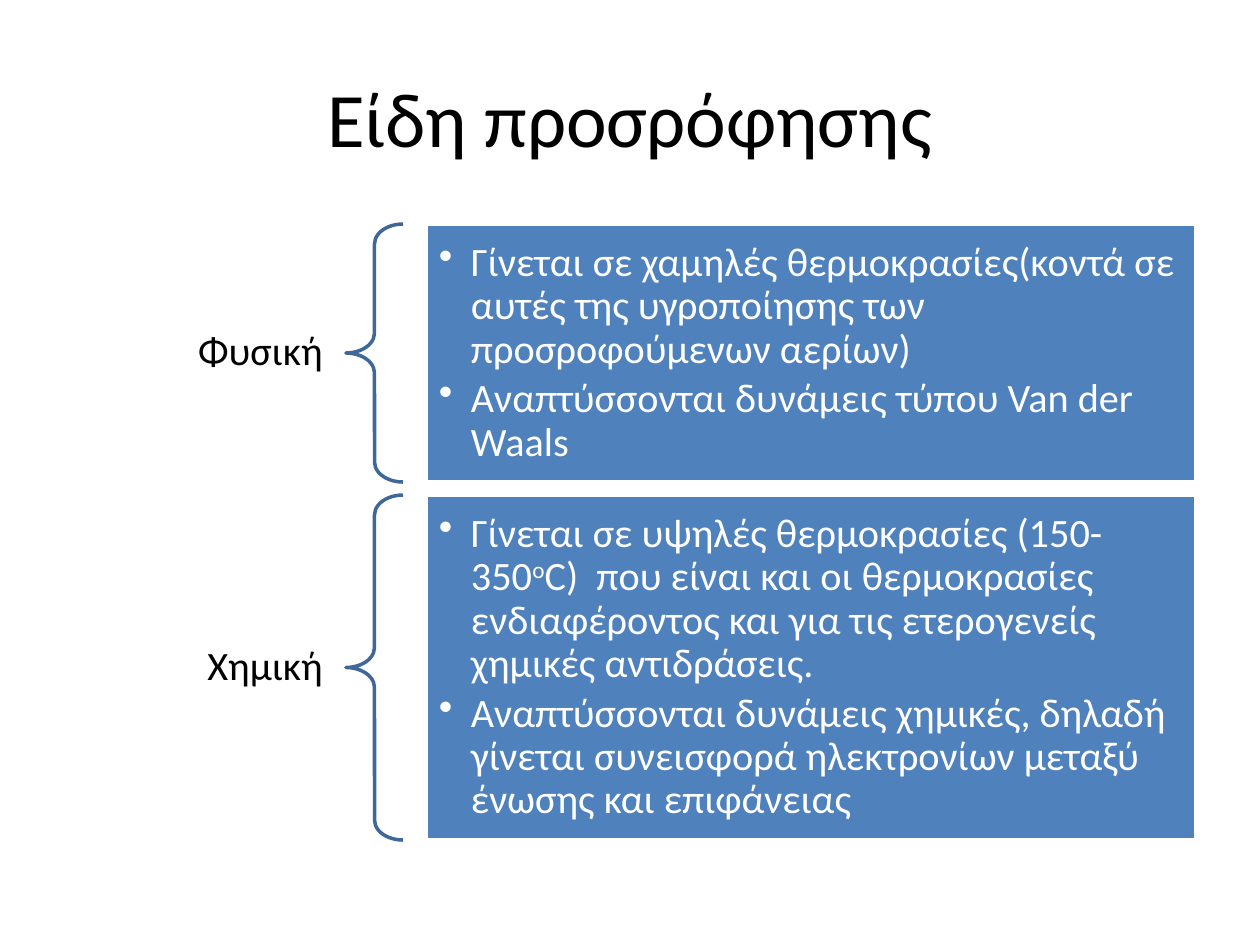
from dataclasses import dataclass

from lxml import etree
from pptx import Presentation
from pptx.dml.color import RGBColor
from pptx.enum.shapes import MSO_SHAPE
from pptx.enum.text import MSO_ANCHOR, PP_ALIGN
from pptx.oxml.ns import qn
from pptx.util import Pt

PX = 914400 / 126
LEFT, CENTER, RIGHT = PP_ALIGN.LEFT, PP_ALIGN.CENTER, PP_ALIGN.RIGHT
MIDDLE = MSO_ANCHOR.MIDDLE
BRACE, RECT = MSO_SHAPE.LEFT_BRACE, MSO_SHAPE.RECTANGLE


@dataclass(frozen=True)
class Theme:
    """Colours, font and type sizes of the slide."""
    font: str = "Calibri"
    ink: str = "000000"
    white: str = "FFFFFF"
    panel: str = "4F81BD"
    brace: str = "3F6797"
    title: int = 44
    body: int = 23
    line: int = 2


THEME = Theme()

KINDS = [
    ("Φυσική", 258, [
        "Γίνεται σε χαμηλές θερμοκρασίες(κοντά σε αυτές της υγροποίησης των "
        "προσροφούμενων αερίων)",
        "Αναπτύσσονται δυνάμεις τύπου Van der Waals",
    ]),
    ("Χημική", 345, [
        "Γίνεται σε υψηλές θερμοκρασίες (150-350^ο^C)  που είναι και οι "
        "θερμοκρασίες ενδιαφέροντος και για τις ετερογενείς χημικές αντιδράσεις.",
        "Αναπτύσσονται δυνάμεις χημικές, δηλαδή γίνεται συνεισφορά ηλεκτρονίων "
        "μεταξύ ένωσης και επιφάνειας",
    ]),
]


def emu(px):
    """Turn px into EMU."""
    return round(px * PX)


def place(box):
    """Turn a px box into EMU lengths."""
    return [emu(side) for side in box]


def bullet(para, indent):
    """Give a paragraph a hanging bullet."""
    props = para._p.get_or_add_pPr()
    props.set("marL", str(emu(indent)))
    props.set("indent", str(-emu(indent)))
    etree.SubElement(props, qn("a:buChar")).set("char", "•")


def write(shape, lines, size=THEME.body, color=THEME.ink, align=LEFT,
          inset=(13, 13), spacing=0.9, after=0, indent=0):
    """Write paragraphs into a shape, raising the text between carets."""
    frame = shape.text_frame
    frame.word_wrap = True
    frame.vertical_anchor = MIDDLE
    frame.margin_left = frame.margin_right = emu(inset[0])
    frame.margin_top = frame.margin_bottom = emu(inset[1])
    for row, line in enumerate(lines):
        para = frame.add_paragraph() if row else frame.paragraphs[0]
        para.alignment = align
        para.line_spacing = spacing
        para.space_after = Pt(after)
        if indent:
            bullet(para, indent)
        for part, text in enumerate(line.split("^")):
            run = para.add_run()
            run.text = text
            run.font.name = THEME.font
            run.font.size = Pt(size)
            run.font.color.rgb = RGBColor.from_string(color)
            if part % 2:
                run._r.get_or_add_rPr().set("baseline", "30000")


def draw(slide, kind, box, line, fill=None):
    """Draw a flat preset shape."""
    shape = slide.shapes.add_shape(kind, *place(box))
    shape.shadow.inherit = False
    shape.line.color.rgb = RGBColor.from_string(line)
    shape.line.width = Pt(THEME.line)
    if fill:
        shape.fill.solid()
        shape.fill.fore_color.rgb = RGBColor.from_string(fill)
    else:
        shape.fill.background()
    return shape


def heading(slide, box, text):
    """Place the slide title."""
    write(slide.shapes.add_textbox(*place(box)), [text], size=THEME.title,
          align=CENTER, inset=(13, 6), spacing=1)


def section(slide, box, name, points):
    """Place a label, its brace and its panel of points."""
    x, y, w, h = box
    label, brace, gap, tall = 283, 57, 23, 63
    side = label + brace + gap
    tag = slide.shapes.add_textbox(*place((x, y + (h - tall) / 2, label, tall)))
    write(tag, [name], align=RIGHT, inset=(23, 8))
    curl = draw(slide, BRACE, (x + label, y, brace, h), THEME.brace)
    curl.adjustments[0] = 0.35
    curl.adjustments[1] = 0.5
    panel = draw(slide, RECT, (x + side, y, w - side, h), THEME.white, THEME.panel)
    write(panel, points, color=THEME.white, after=3.5, indent=32)


def main():
    """Build and save the slide."""
    deck = Presentation()
    deck.slide_width, deck.slide_height = emu(1260), emu(945)
    slide = deck.slides.add_slide(deck.slide_layouts[6])
    heading(slide, (63, 38, 1134, 157), "Είδη προσρόφησης")
    top, gap = 224, 13
    for name, tall, points in KINDS:
        section(slide, (63, top, 1133, tall), name, points)
        top += tall + gap
    deck.save("out.pptx")


if __name__ == "__main__":
    main()
